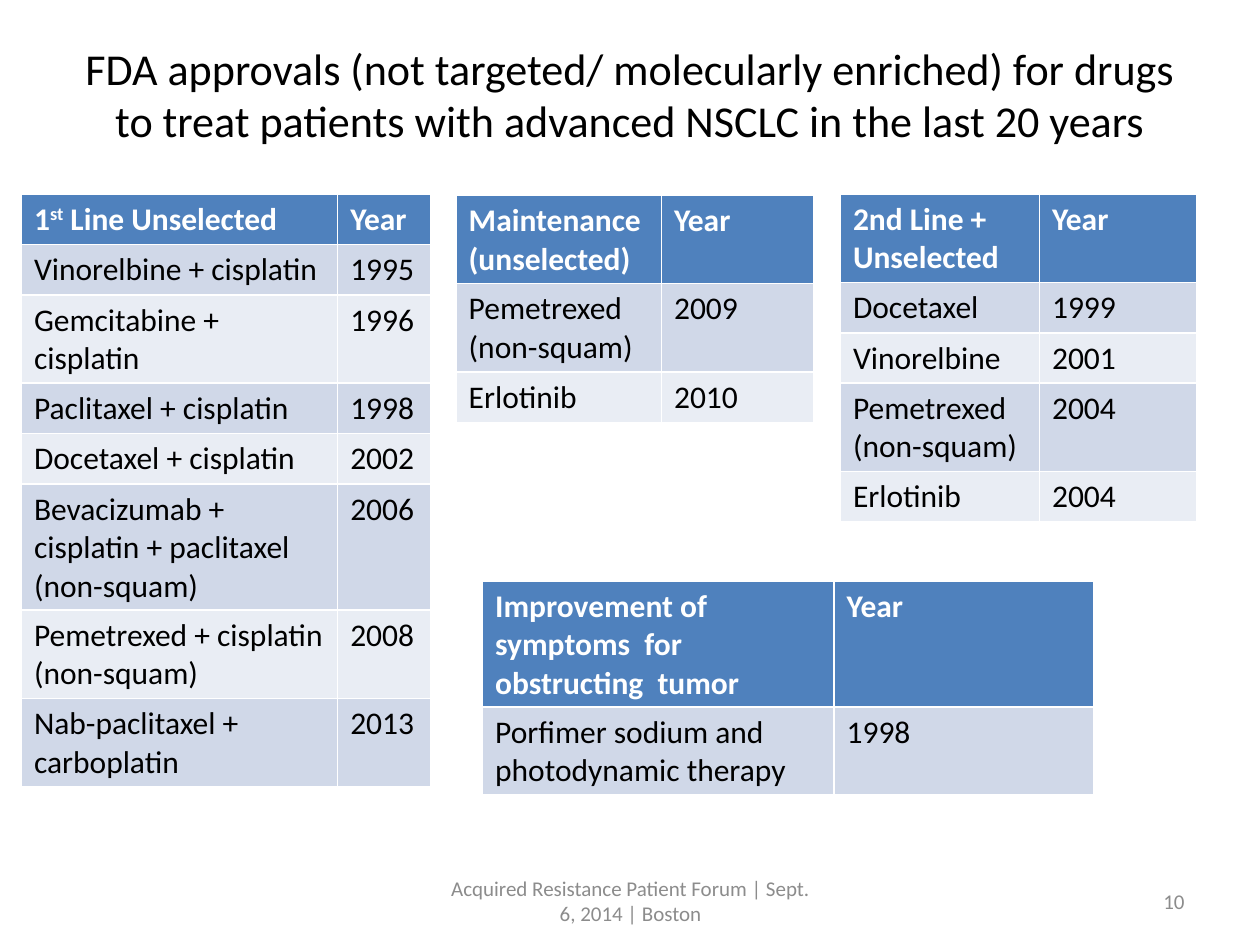
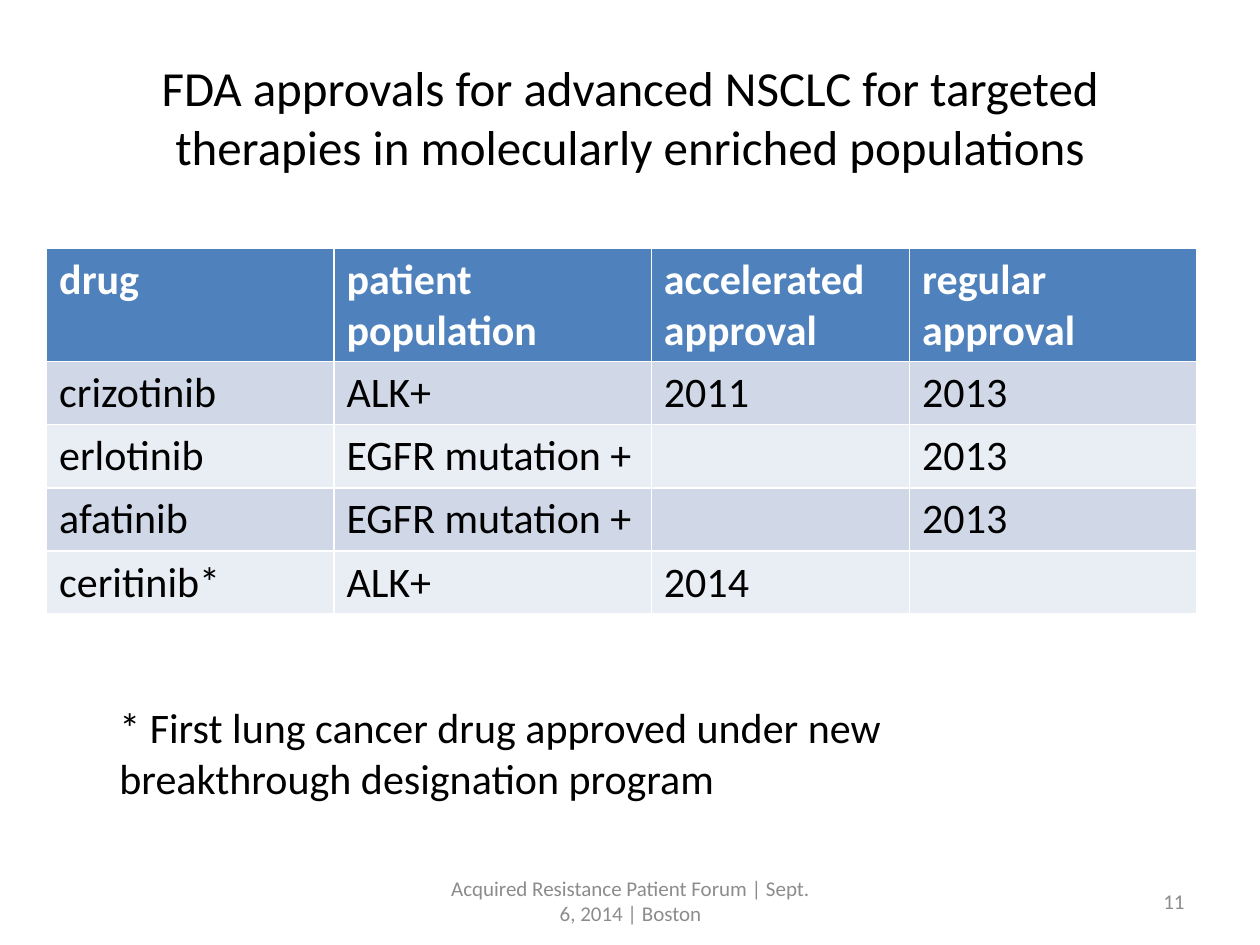
from pptx import Presentation
from pptx.dml.color import RGBColor
from pptx.enum.text import MSO_ANCHOR, MSO_AUTO_SIZE, PP_ALIGN
from pptx.util import Inches, Pt

FONT = "Calibri"
BLACK = RGBColor(0x00, 0x00, 0x00)
WHITE = RGBColor(0xFF, 0xFF, 0xFF)
GRAY = RGBColor(0x8C, 0x8C, 0x8C)
BLUE = RGBColor(0x4F, 0x81, 0xBD)
BANDS = (RGBColor(0xD0, 0xD8, 0xE8), RGBColor(0xE9, 0xED, 0xF4))

LEFT, CENTER, RIGHT = PP_ALIGN.LEFT, PP_ALIGN.CENTER, PP_ALIGN.RIGHT
TOP, MIDDLE = MSO_ANCHOR.TOP, MSO_ANCHOR.MIDDLE
NO_FIT = MSO_AUTO_SIZE.NONE
TITLE_ONLY = 5

FOOTER = "Acquired Resistance Patient Forum | Sept. 6, 2014 | Boston"

FIRST_LINE = [
    ("1st Line Unselected", "Year"),
    ("Vinorelbine + cisplatin", "1995"),
    ("Gemcitabine + cisplatin", "1996"),
    ("Paclitaxel + cisplatin", "1998"),
    ("Docetaxel + cisplatin", "2002"),
    ("Bevacizumab + cisplatin + paclitaxel (non-squam)", "2006"),
    ("Pemetrexed + cisplatin (non-squam)", "2008"),
    ("Nab-paclitaxel + carboplatin", "2013"),
]
UPKEEP = [
    ("Maintenance (unselected)", "Year"),
    ("Pemetrexed\n(non-squam)", "2009"),
    ("Erlotinib", "2010"),
]
SECOND_LINE = [
    ("2nd Line + Unselected", "Year"),
    ("Docetaxel", "1999"),
    ("Vinorelbine", "2001"),
    ("Pemetrexed (non-squam)", "2004"),
    ("Erlotinib", "2004"),
]
SYMPTOMS = [
    ("Improvement of symptoms  for obstructing  tumor", "Year"),
    ("Porfimer sodium and photodynamic therapy", "1998"),
]
TARGETED = [
    ("drug", "patient population", "accelerated approval", "regular approval"),
    ("crizotinib", "ALK+", "2011", "2013"),
    ("erlotinib", "EGFR mutation +", "", "2013"),
    ("afatinib", "EGFR mutation +", "", "2013"),
    ("ceritinib*", "ALK+", "2014", ""),
]


def style(frame, size, color, align=LEFT, bold=False):
    for para in frame.paragraphs:
        para.alignment = align
        font = para.font
        font.name, font.size, font.bold = FONT, Pt(size), bold
        font.color.rgb = color


def add_text(slide, text, box, size, color=BLACK, align=LEFT, anchor=TOP):
    frame = slide.shapes.add_textbox(*map(Inches, box)).text_frame
    frame.word_wrap = True
    frame.vertical_anchor = anchor
    frame.text = text
    style(frame, size, color, align)


def add_slide(deck, title, top, size, number):
    """Add a slide with its title, footer and slide number."""
    slide = deck.slides.add_slide(deck.slide_layouts[TITLE_ONLY])
    head = slide.shapes.title
    head.left, head.top = Inches(0.5), Inches(top)
    head.width, head.height = Inches(9), Inches(1.25)
    frame = head.text_frame
    frame.text = title
    frame.auto_size = NO_FIT
    frame.vertical_anchor = MIDDLE
    style(frame, size, BLACK, CENTER)
    add_text(slide, FOOTER, (3.42, 6.95, 3.17, 0.4), 12, GRAY, CENTER, MIDDLE)
    add_text(slide, str(number), (7.17, 6.95, 2.33, 0.4), 12, GRAY, RIGHT, MIDDLE)
    return slide


def add_grid(slide, rows, left, top, widths, size=18):
    """Add a banded table whose rows grow with their text."""
    frame = slide.shapes.add_table(
        len(rows), len(widths), Inches(left), Inches(top),
        Inches(sum(widths)), Inches(0.4 * len(rows)))
    table = frame.table
    for col, width in zip(table.columns, widths):
        col.width = Inches(width)
    for r, row in enumerate(rows):
        is_head = r == 0
        for c, text in enumerate(row):
            cell = table.cell(r, c)
            cell.text = text
            cell.fill.solid()
            cell.fill.fore_color.rgb = BLUE if is_head else BANDS[(r - 1) % 2]
            style(cell.text_frame, size, WHITE if is_head else BLACK, bold=is_head)
    return table


def raise_suffix(cell, start, end):
    """Set the characters from start to end as superscript."""
    para = cell.text_frame.paragraphs[0]
    text = para.text
    para.runs[0].text = text[:start]
    suffix = para.add_run()
    suffix.text = text[start:end]
    suffix._r.get_or_add_rPr().set("baseline", "30000")
    para.add_run().text = text[end:]


def add_general(deck):
    slide = add_slide(
        deck, "FDA approvals (not targeted/ molecularly enriched) for drugs "
        "to treat patients with advanced NSCLC in the last 20 years", 0.12, 25.2, 10)
    first = add_grid(slide, FIRST_LINE, 0.17, 1.54, (2.51, 0.74))
    raise_suffix(first.cell(0, 0), 1, 3)
    add_grid(slide, UPKEEP, 3.62, 1.55, (1.63, 1.21))
    add_grid(slide, SECOND_LINE, 6.67, 1.54, (1.58, 1.25))
    add_grid(slide, SYMPTOMS, 3.83, 4.61, (2.79, 2.06))


def add_targeted(deck):
    slide = add_slide(
        deck, "FDA approvals for advanced NSCLC for targeted therapies "
        "in molecularly enriched populations", 0.3, 28, 11)
    add_grid(slide, TARGETED, 0.37, 1.97, (2.28, 2.52, 2.05, 2.28), 24)
    add_text(slide, "* First lung cancer drug approved under new "
             "breakthrough designation program", (0.85, 5.52, 7, 0.91), 24)


def main():
    deck = Presentation()
    deck.slide_width, deck.slide_height = Inches(10), Inches(7.5)
    add_general(deck)
    add_targeted(deck)
    deck.save("out.pptx")


if __name__ == "__main__":
    main()
